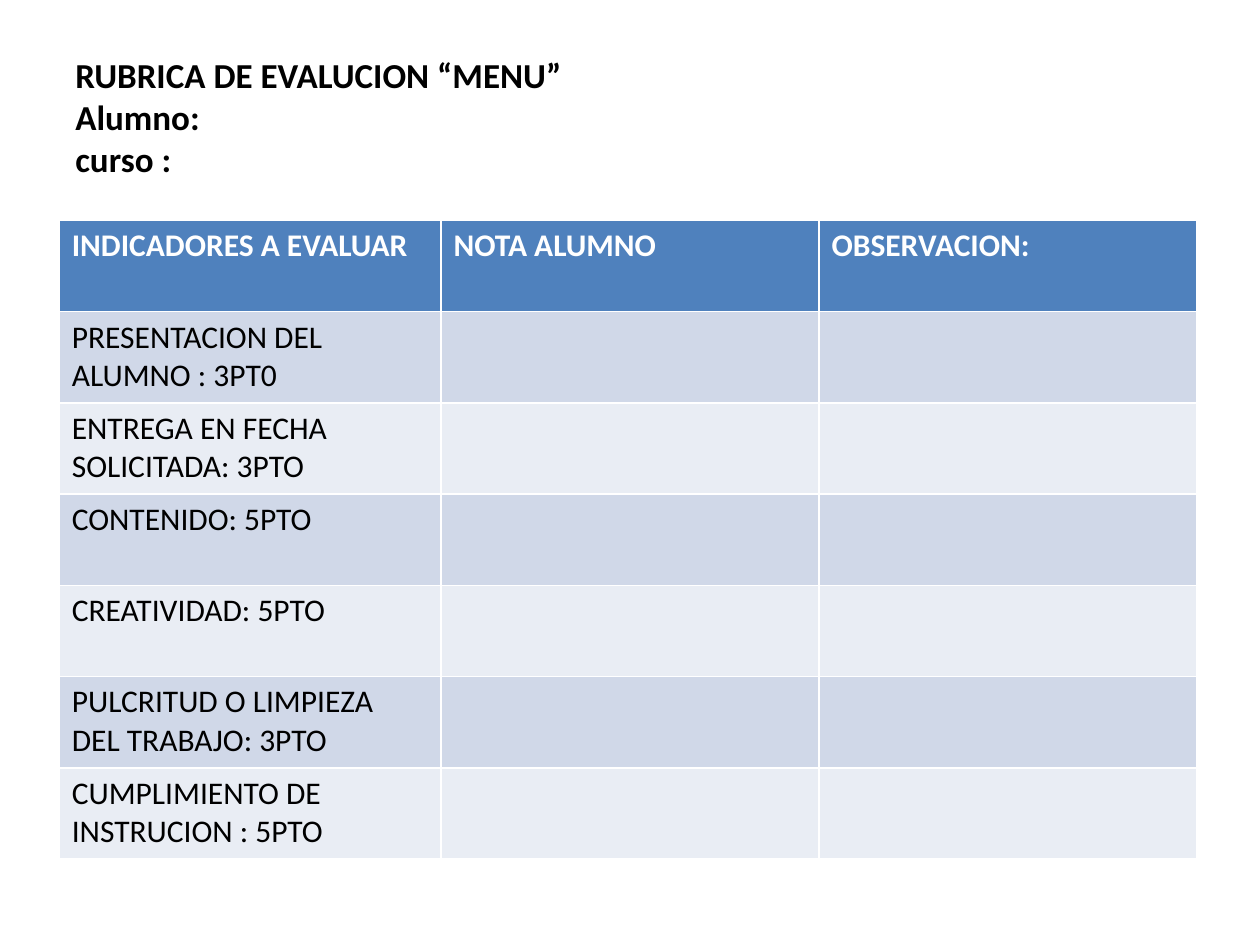
"""Build a grading rubric slide with a heading and a table of indicators."""
from pptx import Presentation
from pptx.dml.color import RGBColor
from pptx.enum.text import MSO_ANCHOR
from pptx.util import Inches, Pt

MIDDLE = MSO_ANCHOR.MIDDLE
FONT = "Calibri"
COLORS = {
    "ink": "000000",
    "header": "4F81BD",
    "header_text": "FFFFFF",
    "odd_row": "D0D8E8",
    "even_row": "E9EDF4",
}
HEADING = ["RUBRICA DE EVALUCION “MENU”", "Alumno:", "curso :"]
COLUMNS = ["INDICADORES A EVALUAR", "NOTA ALUMNO", "OBSERVACION:"]
INDICATORS = [
    "PRESENTACION DEL ALUMNO : 3PT0",
    "ENTREGA EN FECHA SOLICITADA: 3PTO",
    "CONTENIDO: 5PTO",
    "CREATIVIDAD: 5PTO",
    "PULCRITUD O LIMPIEZA DEL TRABAJO: 3PTO",
    "CUMPLIMIENTO DE INSTRUCION : 5PTO",
]
COLUMN_WIDTHS = [3.03, 3, 3]
TABLE_LEFT, TABLE_TOP = 0.47, 1.75
ROW_HEIGHT = 5.07 / 7


def write(frame, text, size=18, color="ink", bold=False):
    para = frame.paragraphs[0]
    para.text = text
    para.font.size = Pt(size)
    for span in para.runs:
        span.font.name = FONT
        span.font.size = Pt(size)
        span.font.bold = bold
        span.font.color.rgb = RGBColor.from_string(COLORS[color])


def add_heading(page):
    box = page.shapes.add_textbox(Inches(0.5), Inches(0.3), Inches(9), Inches(1.25))
    box.text_frame.word_wrap = True
    box.text_frame.vertical_anchor = MIDDLE
    write(box.text_frame, "\v".join(HEADING), size=20, bold=True)


def add_rubric(page):
    rows = [COLUMNS] + [[indicator, "", ""] for indicator in INDICATORS]
    table = page.shapes.add_table(
        len(rows), len(COLUMNS), Inches(TABLE_LEFT), Inches(TABLE_TOP),
        Inches(sum(COLUMN_WIDTHS)), Inches(ROW_HEIGHT * len(rows)),
    ).table
    for column, width in zip(table.columns, COLUMN_WIDTHS):
        column.width = Inches(width)
    for r, texts in enumerate(rows):
        table.rows[r].height = Inches(ROW_HEIGHT)
        is_header = r == 0
        fill = "header" if is_header else "odd_row" if r % 2 else "even_row"
        for c, text in enumerate(texts):
            cell = table.cell(r, c)
            cell.fill.solid()
            cell.fill.fore_color.rgb = RGBColor.from_string(COLORS[fill])
            write(cell.text_frame, text, bold=is_header,
                  color="header_text" if is_header else "ink")


def main():
    deck = Presentation()
    deck.slide_width, deck.slide_height = Inches(10), Inches(7.5)
    page = deck.slides.add_slide(deck.slide_layouts[6])
    add_heading(page)
    add_rubric(page)
    deck.save("out.pptx")


if __name__ == "__main__":
    main()
